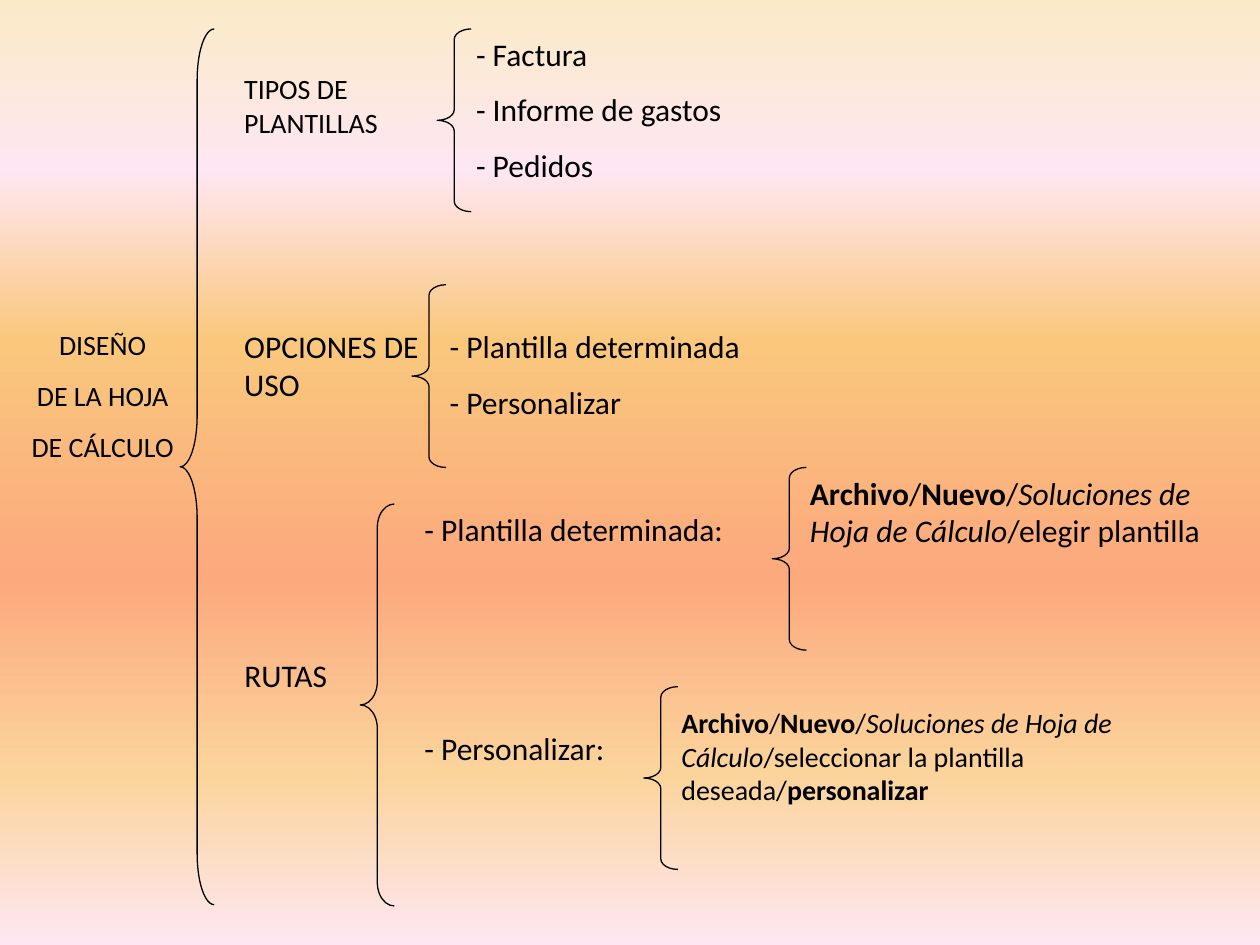
from pptx import Presentation
from pptx.dml.color import RGBColor
from pptx.enum.shapes import MSO_SHAPE
from pptx.enum.text import PP_ALIGN
from pptx.oxml import parse_xml
from pptx.oxml.ns import nsdecls, qn
from pptx.util import Inches, Pt

THEME = {
    "font": "Calibri",
    "ink": RGBColor(0, 0, 0),
    "small": Pt(16),
    "large": Pt(18),
    "after": Pt(10),
    "line": Pt(0.75),
    "stops": [(0, "FBEAC7"), (18, "FEE7F2"), (36, "FAC77D"),
              (61, "FBA97D"), (82, "FBD49C"), (100, "FEE7F2")],
}

ROUTE = [("Archivo", "b"), ("/", ""), ("Nuevo", "b"), ("/", ""),
         ("Soluciones de Hoja de Cálculo", "i")]

TEXTS = [
    ((0, 2.55, 1.63, 2.32), "small", PP_ALIGN.CENTER,
     ["DISEÑO", "DE LA HOJA", "DE CÁLCULO"]),
    ((1.84, 0.52, 1.63, 1.16), "small", PP_ALIGN.LEFT, ["TIPOS DE PLANTILLAS"]),
    ((1.84, 2.55, 1.63, 1.16), "large", PP_ALIGN.LEFT, ["OPCIONES DE USO"]),
    ((1.84, 5.16, 1.02, 0.58), "large", PP_ALIGN.LEFT, ["RUTAS"]),
    ((3.68, 0.23, 2.66, 1.45), "large", PP_ALIGN.LEFT,
     ["- Factura", "- Informe de gastos", "- Pedidos"]),
    ((3.47, 2.55, 3.06, 1.16), "large", PP_ALIGN.LEFT,
     ["- Plantilla determinada", "- Personalizar"]),
    ((3.27, 4, 3.06, 0.58), "large", PP_ALIGN.LEFT, ["- Plantilla determinada:"]),
    ((3.27, 5.74, 1.84, 0.58), "large", PP_ALIGN.LEFT, ["- Personalizar:"]),
    ((6.33, 3.71, 3.47, 1.45), "large", PP_ALIGN.LEFT,
     [ROUTE + [("/elegir plantilla", "")]]),
    ((5.31, 5.55, 4.08, 1.45), "small", PP_ALIGN.LEFT,
     [ROUTE + [("/seleccionar la plantilla deseada/", ""), ("personalizar", "b")]]),
]

WIDTH = 0.27
BRACES = [
    (1.43, 0.23, 6.95, 1.5),
    (3.47, 0.23, 1.45, 0.31),
    (3.27, 2.26, 1.45, 0.31),
    (2.86, 4, 3.19, 0.69),
    (6.13, 3.71, 1.45, 0.31),
    (5.11, 5.45, 1.45, 0.31),
]


def paint(slide):
    fill = slide.background.fill
    fill.gradient()
    fill.gradient_angle = 270
    stops = next(slide.element.iter(qn("a:gsLst")))
    stops.clear()
    for pos, color in THEME["stops"]:
        stops.append(parse_xml(
            f'<a:gs {nsdecls("a")} pos="{pos * 1000}">'
            f'<a:srgbClr val="{color}"/></a:gs>'))


def add_text(slide, box, size, align, lines):
    frame = slide.shapes.add_textbox(*map(Inches, box)).text_frame
    frame.word_wrap = True
    for num, line in enumerate(lines):
        para = frame.add_paragraph() if num else frame.paragraphs[0]
        para.alignment = align
        para.space_after = THEME["after"]
        parts = [(line, "")] if isinstance(line, str) else line
        for text, style in parts:
            run = para.add_run()
            run.text = text
            font = run.font
            font.name = THEME["font"]
            font.size = THEME[size]
            font.color.rgb = THEME["ink"]
            font.bold = style == "b"
            font.italic = style == "i"


def add_brace(slide, left, top, height, curve):
    box = map(Inches, (left, top, WIDTH, height))
    brace = slide.shapes.add_shape(MSO_SHAPE.LEFT_BRACE, *box)
    brace.adjustments[0] = curve
    brace.adjustments[1] = 0.5
    brace.shadow.inherit = False
    brace.fill.background()
    brace.line.color.rgb = THEME["ink"]
    brace.line.width = THEME["line"]


def main():
    deck = Presentation()
    deck.slide_width = Inches(10)
    deck.slide_height = Inches(7.5)
    slide = deck.slides.add_slide(deck.slide_layouts[6])
    paint(slide)
    for item in TEXTS:
        add_text(slide, *item)
    for item in BRACES:
        add_brace(slide, *item)
    deck.save("out.pptx")


if __name__ == "__main__":
    main()
